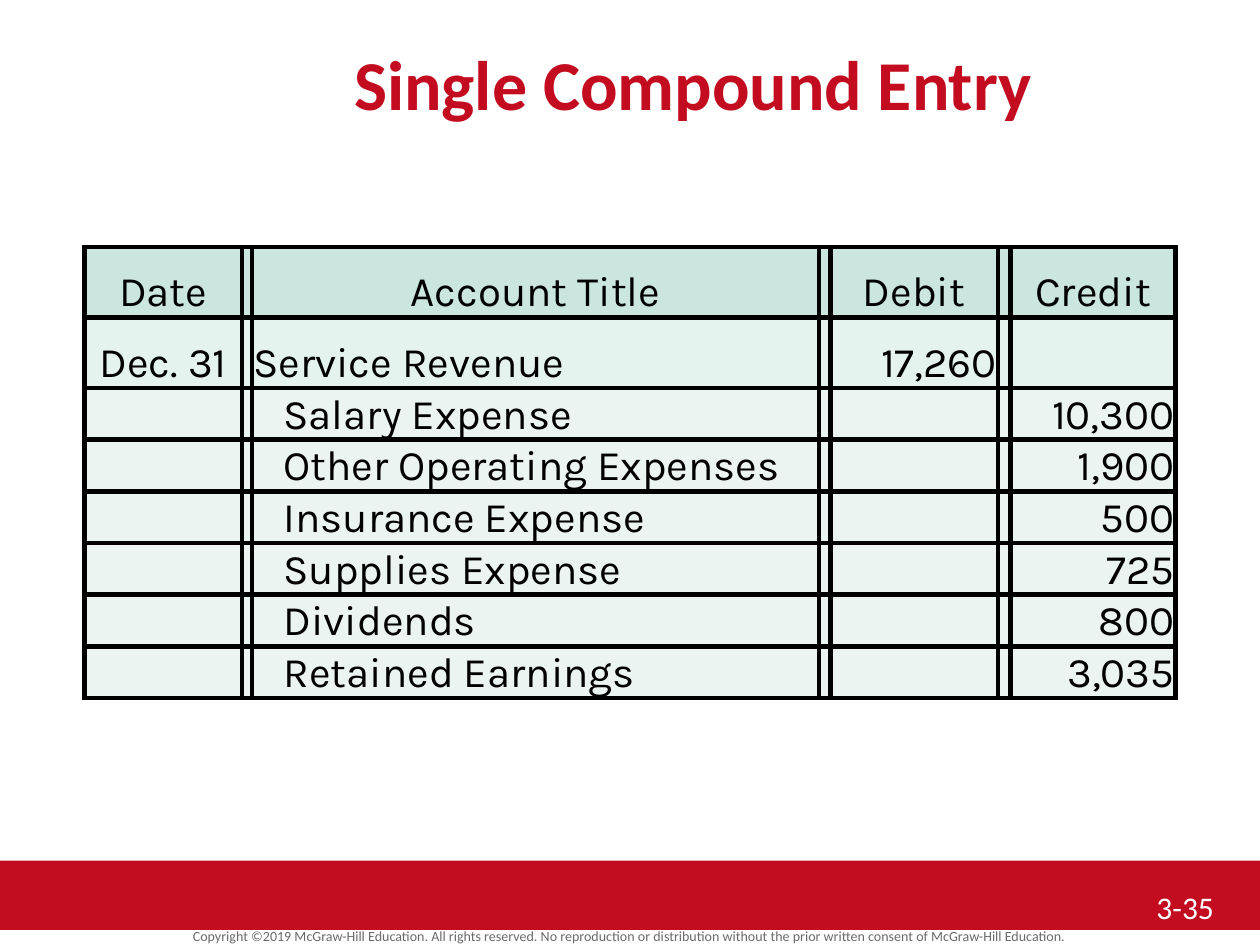
import pptx
import pptx.util
import pptx.dml.color
import pptx.enum.shapes
import pptx.enum.text
import lxml.etree

Inches = pptx.util.Inches
Pt = pptx.util.Pt
ALIGN = pptx.enum.text.PP_ALIGN
ANCHOR = pptx.enum.text.MSO_ANCHOR

COLORS = {
    "red": "C30C20",
    "white": "FFFFFF",
    "gray": "6A6A6A",
    "black": "000000",
    "head": "CAE6DE",
    "first": "E4F3EE",
    "body": "ECF4F1",
}


def color(name):
    return pptx.dml.color.RGBColor.from_string(COLORS[name])


def write(frame, text, size, tint, align, face="Calibri", bold=False):
    para = frame.paragraphs[0]
    para.alignment = align
    run = para.add_run()
    run.text = text
    run.font.size = Pt(size)
    run.font.name = face
    run.font.bold = bold
    run.font.color.rgb = color(tint)
    return para


deck = pptx.Presentation()
deck.slide_width = Inches(10)
deck.slide_height = Inches(7.5)
slide = deck.slides.add_slide(deck.slide_layouts[6])
shapes = slide.shapes

band = shapes.add_shape(
    pptx.enum.shapes.MSO_SHAPE.RECTANGLE,
    Inches(0), Inches(6.83), Inches(10), Inches(0.55),
)
band.shadow.inherit = False
band.fill.solid()
band.fill.fore_color.rgb = color("red")
band.line.fill.background()

legal = shapes.add_textbox(Inches(0), Inches(7.34), Inches(10), Inches(0.19)).text_frame
legal.word_wrap = True
para = write(
    legal,
    "Copyright ©2019 McGraw-Hill Education. All rights reserved. No reproduction or "
    "distribution without the prior written consent of McGraw-Hill Education.",
    8, "gray", ALIGN.CENTER,
)
para.line_spacing = 0.8

title = shapes.add_textbox(Inches(1), Inches(0.25), Inches(9), Inches(0.67)).text_frame
title.word_wrap = True
title.margin_top = Inches(0.07)
write(title, "Single Compound Entry", 40, "red", ALIGN.CENTER, bold=True)

number = shapes.add_textbox(Inches(9.08), Inches(7), Inches(0.92), Inches(0.42)).text_frame
number.word_wrap = True
write(number, "3-35", 18, "white", ALIGN.LEFT)

entries = [
    ("Date", "Account Title", "Debit", "Credit"),
    ("Dec. 31", "Service Revenue", "17,260", ""),
    ("", "Salary Expense", "", "10,300"),
    ("", "Other Operating Expenses", "", "1,900"),
    ("", "Insurance Expense", "", "500"),
    ("", "Supplies Expense", "", "725"),
    ("", "Dividends", "", "800"),
    ("", "Retained Earnings", "", "3,035"),
]
widths = [1.25, 0.08, 4.5, 0.09, 1.33, 0.1, 1.31]
aligns = [ALIGN.CENTER, ALIGN.LEFT, ALIGN.RIGHT, ALIGN.RIGHT]

table = shapes.add_table(
    len(entries), len(widths), Inches(0.67), Inches(1.96), Inches(8.66), Inches(3.52)
).table
for col, width in zip(table.columns, widths):
    col.width = Inches(width)

for r, entry in enumerate(entries):
    table.rows[r].height = Inches(0.56 if r < 2 else 0.4)
    shade = ("head", "first")[r] if r < 2 else "body"
    for c in range(len(widths)):
        cell = table.cell(r, c)
        cell.margin_left = cell.margin_right = cell.margin_top = Inches(0.01)
        cell.margin_bottom = Inches(0)
        cell.vertical_anchor = ANCHOR.BOTTOM
        field = c // 2
        if c % 2 == 0 and entry[field]:
            align = ALIGN.CENTER if r == 0 else aligns[field]
            write(cell.text_frame, entry[field], 24, "black", align, "Karla")
            if r > 1 and field == 1:
                cell.margin_left = Inches(0.25)
        props = cell._tc.get_or_add_tcPr()
        for side in ("lnL", "lnR", "lnT", "lnB"):
            props.append(lxml.etree.fromstring(
                '<a:%s xmlns:a="http://schemas.openxmlformats.org/drawingml/2006/main" w="%d">'
                '<a:solidFill><a:srgbClr val="%s"/></a:solidFill></a:%s>'
                % (side, Pt(3), COLORS["black"], side)
            ))
        cell.fill.solid()
        cell.fill.fore_color.rgb = color(shade)

deck.save("out.pptx")
